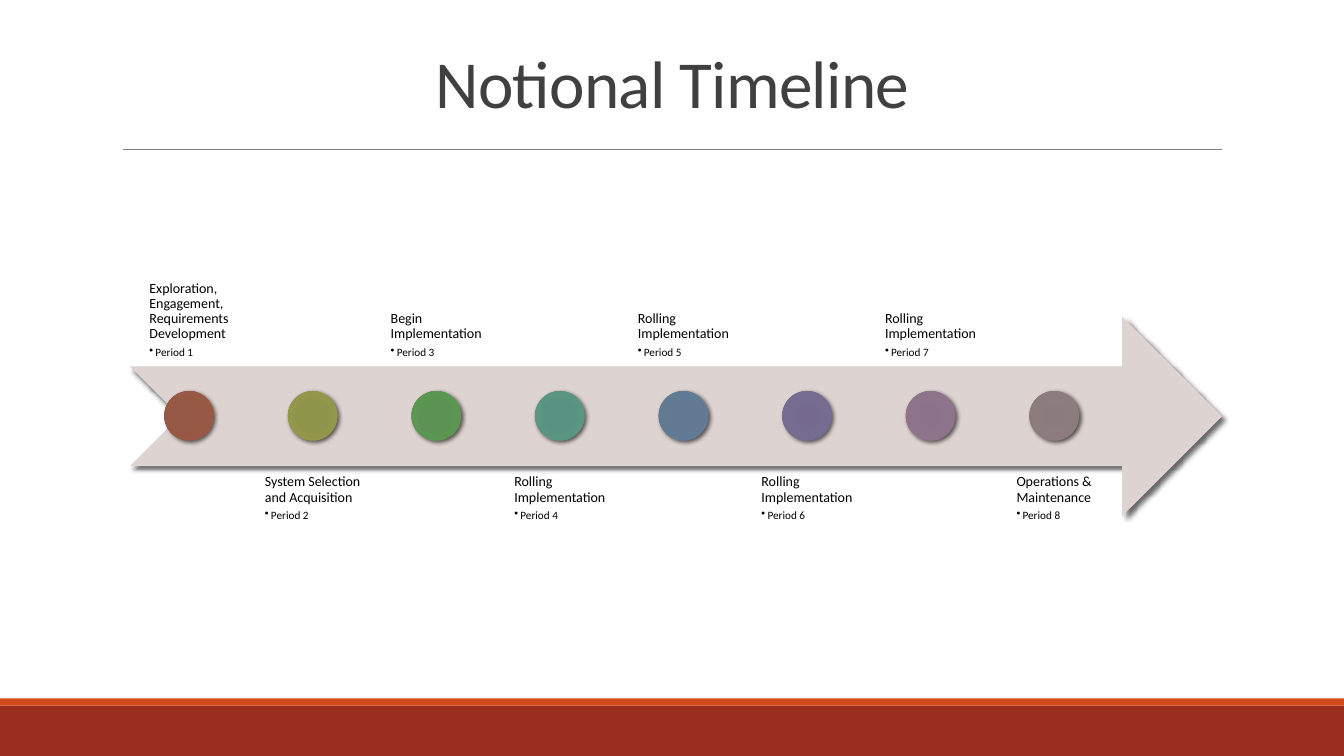
import dataclasses

import lxml.etree
import pptx
import pptx.dml.color
import pptx.enum.shapes
import pptx.enum.text
import pptx.oxml
import pptx.oxml.ns
import pptx.shapes.autoshape
import pptx.slide
import pptx.text.text
import pptx.util

Inches = pptx.util.Inches
Pt = pptx.util.Pt
Kind = pptx.enum.shapes.MSO_SHAPE
Anchor = pptx.enum.text.MSO_ANCHOR
Align = pptx.enum.text.PP_ALIGN
qn = pptx.oxml.ns.qn
SPACE = pptx.oxml.ns.nsdecls("a")


@dataclasses.dataclass(frozen=True)
class Theme:
    font: str = "Calibri"
    band: str = "9B2D1F"
    stripe: str = "D34817"
    rule: str = "808080"
    title: str = "404040"
    arrow: str = "DDD3D0"
    text: str = "000000"
    title_size: float = 48
    stage_size: float = 10
    date_size: float = 8


@dataclasses.dataclass(frozen=True)
class Box:
    left: float
    top: float
    width: float
    height: float

    def lengths(self) -> tuple:
        return tuple(Inches(side) for side in dataclasses.astuple(self))


@dataclasses.dataclass(frozen=True)
class Stage:
    label: str
    shades: tuple[str, str, str, str]


THEME = Theme()
FIRST = 1.29
STEP = 8.58 / 7
LABEL_WIDTH = 1.17
LABEL_HEIGHT = 1.98
DISC = 0.49
STOPS = (0, 34, 70, 100)
STAGES = (
    Stage("Exploration, Engagement, Requirements Development", ("945742", "945844", "985944", "98604E")),
    Stage("System Selection and Acquisition", ("8F9449", "8F944B", "93974B", "949854")),
    Stage("Begin Implementation", ("599350", "5A9352", "5B9752", "63985B")),
    Stage("Rolling Implementation", ("57927F", "599280", "5A9582", "639887")),
    Stage("Rolling Implementation", ("5F7890", "617991", "627B94", "6A8197")),
    Stage("Rolling Implementation", ("73688D", "756A8E", "766B91", "7D7395")),
    Stage("Rolling Implementation", ("8B7188", "8C7389", "8E748B", "937B90")),
    Stage("Operations & Maintenance", ("89797A", "8A7B7C", "8C7C7D", "928384")),
)


def tint(code: str) -> pptx.dml.color.RGBColor:
    return pptx.dml.color.RGBColor.from_string(code)


def add_run(para: pptx.text.text._Paragraph, text: str, size: float, color: str) -> pptx.text.text._Run:
    run = para.add_run()
    run.text = text
    run.font.name = THEME.font
    run.font.size = Pt(size)
    run.font.color.rgb = tint(color)
    return run


def add_shape(slide: pptx.slide.Slide, kind: Kind, box: Box) -> pptx.shapes.autoshape.Shape:
    shape = slide.shapes.add_shape(kind, *box.lengths())
    shape.shadow.inherit = False
    shape.line.fill.background()
    return shape


def add_solid(slide: pptx.slide.Slide, kind: Kind, box: Box, color: str) -> pptx.shapes.autoshape.Shape:
    shape = add_shape(slide, kind, box)
    shape.fill.solid()
    shape.fill.fore_color.rgb = tint(color)
    return shape


def cast_shadow(shape: pptx.shapes.autoshape.Shape) -> None:
    effects = shape._element.spPr.find(qn("a:effectLst"))
    effects.append(pptx.oxml.parse_xml(
        f'<a:outerShdw {SPACE} blurRad="{Pt(3)}" dist="{Pt(2)}" dir="2700000" rotWithShape="0">'
        '<a:srgbClr val="000000"><a:alpha val="60000"/></a:srgbClr></a:outerShdw>'))


def add_disc(slide: pptx.slide.Slide, box: Box, shades: tuple) -> None:
    disc = add_shape(slide, Kind.OVAL, box)
    stops = "".join(f'<a:gs pos="{stop * 1000}"><a:srgbClr val="{shade}"/></a:gs>'
                    for stop, shade in zip(STOPS, shades))
    fill = pptx.oxml.parse_xml(
        f'<a:gradFill {SPACE} rotWithShape="1"><a:gsLst>{stops}</a:gsLst><a:path path="circle">'
        '<a:fillToRect l="100000" t="100000" r="100000" b="100000"/></a:path></a:gradFill>')
    disc._element.spPr.find(qn("a:prstGeom")).addnext(fill)
    cast_shadow(disc)


def add_label(slide: pptx.slide.Slide, box: Box, anchor: Anchor, label: str, date: str) -> None:
    frame = slide.shapes.add_textbox(*box.lengths()).text_frame
    frame.word_wrap = True
    frame.vertical_anchor = anchor
    frame.margin_left = frame.margin_right = Inches(0.08)
    frame.margin_top = frame.margin_bottom = Inches(0.08)
    frame._txBody.bodyPr.set("anchorCtr", "1")

    head = frame.paragraphs[0]
    head.line_spacing = 0.9
    head.space_after = Pt(3.5)
    add_run(head, label, THEME.stage_size, THEME.text)

    item = frame.add_paragraph()
    item.level = 1
    props = item._p.get_or_add_pPr()
    props.set("marL", str(Inches(0.06)))
    props.set("indent", str(Inches(-0.06)))
    lxml.etree.SubElement(props, qn("a:buChar")).set("char", "•")
    item.line_spacing = 0.9
    item.space_after = Pt(1.2)
    add_run(item, date, THEME.date_size, THEME.text)


def add_frame(slide: pptx.slide.Slide) -> None:
    add_solid(slide, Kind.RECTANGLE, Box(0, 7, 13.33, 0.5), THEME.band)
    add_solid(slide, Kind.RECTANGLE, Box(0, 6.93, 13.33, 0.07), THEME.stripe)
    rule = slide.shapes.add_connector(
        pptx.enum.shapes.MSO_CONNECTOR.STRAIGHT,
        Inches(1.22), Inches(1.48), Inches(12.12), Inches(1.48))
    rule.line.color.rgb = tint(THEME.rule)
    rule.line.width = Pt(0.5)
    lxml.etree.SubElement(rule._element.spPr, qn("a:effectLst"))


def set_title(slide: pptx.slide.Slide, text: str) -> None:
    title = slide.shapes.title
    title.left, title.top, title.width, title.height = Box(1.72, 0.36, 9.9, 0.9).lengths()
    frame = title.text_frame
    frame.word_wrap = True
    frame.auto_size = pptx.enum.text.MSO_AUTO_SIZE.NONE
    frame.vertical_anchor = Anchor.BOTTOM
    para = frame.paragraphs[0]
    para.alignment = Align.CENTER
    para.line_spacing = 0.85
    run = add_run(para, text, THEME.title_size, THEME.title)
    run._r.get_or_add_rPr().set("spc", "-50")


def add_stages(slide: pptx.slide.Slide) -> None:
    arrow = add_solid(slide, Kind.NOTCHED_RIGHT_ARROW, Box(FIRST, 3.14, 10.83, 1.98), THEME.arrow)
    cast_shadow(arrow)
    for index, stage in enumerate(STAGES):
        left = FIRST + index * STEP
        top, anchor = (4.63, Anchor.TOP) if index % 2 else (1.66, Anchor.BOTTOM)
        add_label(slide, Box(left, top, LABEL_WIDTH, LABEL_HEIGHT), anchor,
                  stage.label, f"Period {index + 1}")
        add_disc(slide, Box(left + (LABEL_WIDTH - DISC) / 2, 3.88, DISC, DISC), stage.shades)


def main() -> None:
    deck = pptx.Presentation()
    deck.slide_width = Inches(13.33)
    deck.slide_height = Inches(7.5)
    slide = deck.slides.add_slide(deck.slide_layouts.get_by_name("Title Only"))
    add_frame(slide)
    set_title(slide, "Notional Timeline")
    add_stages(slide)
    deck.save("out.pptx")


if __name__ == "__main__":
    main()
